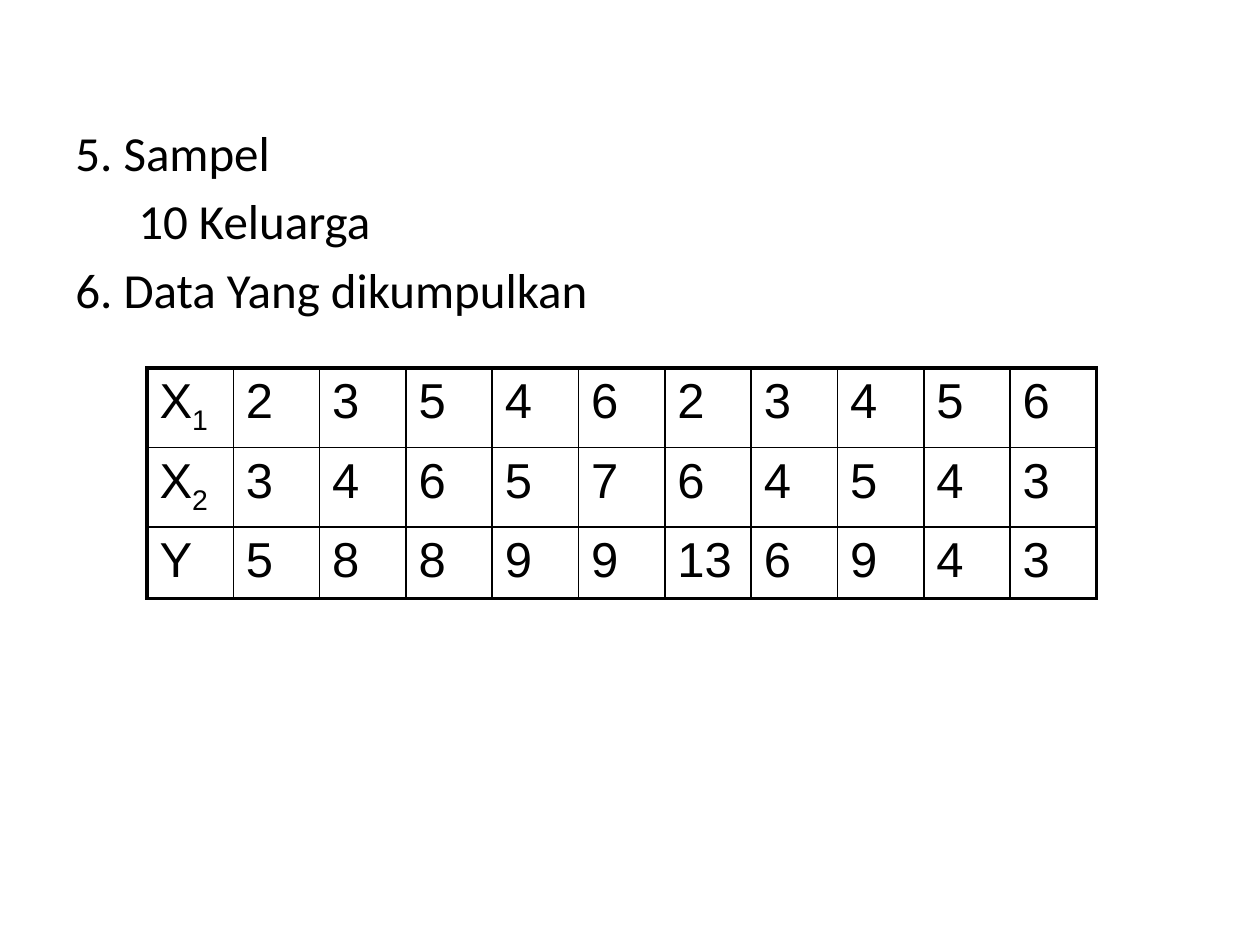
from lxml.etree import SubElement
from pptx import Presentation
from pptx.dml.color import RGBColor
from pptx.oxml.ns import qn
from pptx.util import Emu, Pt

BLACK = RGBColor(0, 0, 0)
THICK, THIN = Pt(2.25), Pt(1)
LINES = [("5. Sampel", 48, -48), ("10 Keluarga", 102, -39),
         ("6. Data Yang dikumpulkan", 48, -48)]
DATA = [("X", "1", [2, 3, 5, 4, 6, 2, 3, 4, 5, 6]),
        ("X", "2", [3, 4, 6, 5, 7, 6, 4, 5, 4, 3]),
        ("Y", "", [5, 8, 8, 9, 9, 13, 6, 9, 4, 3])]


def px(n):
    return Emu(round(n * 914400 / 126))


def style(par, face):
    par.font.name = face
    par.font.size = Pt(28)
    par.font.color.rgb = BLACK
    par.space_before = Pt(5.6)


def add_text(slide, x, y, w, h):
    frame = slide.shapes.add_textbox(px(x), px(y), px(w), px(h)).text_frame
    frame.word_wrap = True
    for i, (text, left, hang) in enumerate(LINES):
        par = frame.add_paragraph() if i else frame.paragraphs[0]
        par.text = text
        style(par, "Calibri")
        props = par._p.get_or_add_pPr()
        props.set("marL", str(px(left)))
        props.set("indent", str(px(hang)))


def set_edges(cell, sides):
    """Draw the cell's borders; sides maps L, R, T, B to line widths."""
    props = cell._tc.get_or_add_tcPr()
    for i, (side, width) in enumerate(sides.items()):
        line = SubElement(props, qn(f"a:ln{side}"), w=str(width))
        fill = SubElement(line, qn("a:solidFill"))
        SubElement(fill, qn("a:srgbClr"), val=str(BLACK))
        props.insert(i, line)  # borders come before the fill


def fill_cell(cell, text, sub=""):
    par = cell.text_frame.paragraphs[0]
    par.add_run().text = text
    if sub:
        run = par.add_run()
        run.text = sub
        run._r.get_or_add_rPr().set("baseline", "-25000")
    style(par, "Arial")
    cell.fill.background()


def add_data(slide, x, y, w, h):
    rows, cols = len(DATA), len(DATA[0][2]) + 1
    table = slide.shapes.add_table(rows, cols, px(x), px(y), px(w), px(h)).table
    table.first_row = table.horz_banding = False
    for col in table.columns:
        col.width = px(w / cols)
    for r, (name, sub, values) in enumerate(DATA):
        fill_cell(table.cell(r, 0), name, sub)
        for c, value in enumerate(values, 1):
            fill_cell(table.cell(r, c), str(value))
        for c in range(cols):
            outer = {"L": c == 0, "R": c == cols - 1,
                     "T": r == 0, "B": r == rows - 1}
            set_edges(table.cell(r, c),
                      {k: THICK if out else THIN for k, out in outer.items()})


def main():
    deck = Presentation()
    deck.slide_width, deck.slide_height = px(1260), px(945)
    slide = deck.slides.add_slide(deck.slide_layouts[6])
    add_text(slide, 63, 116, 1197, 624)
    add_data(slide, 147, 368, 950, 215)
    deck.save("out.pptx")


if __name__ == "__main__":
    main()
